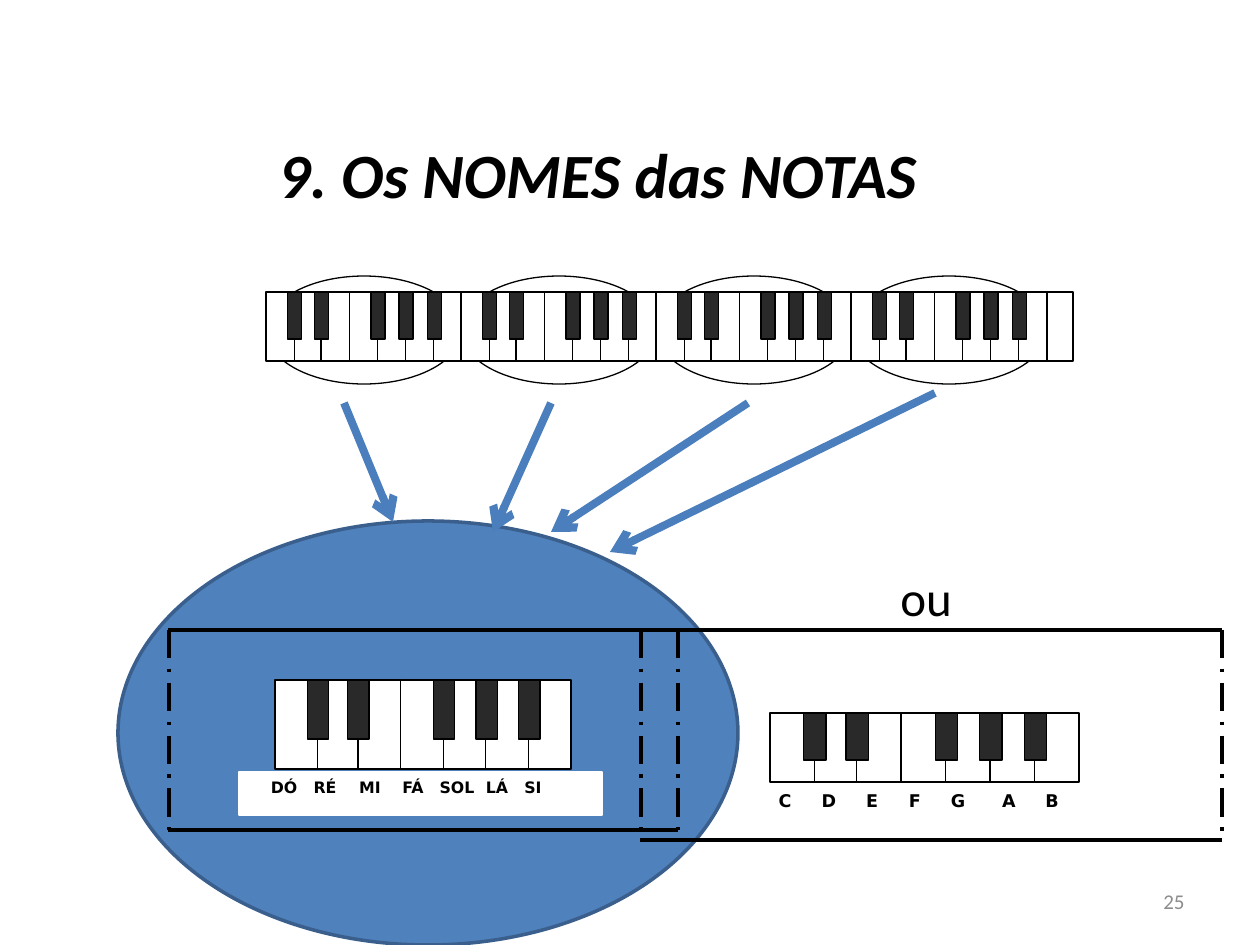
from lxml.etree import SubElement
from pptx import Presentation
from pptx.dml.color import RGBColor
from pptx.enum.dml import MSO_LINE
from pptx.enum.shapes import MSO_CONNECTOR, MSO_SHAPE
from pptx.enum.text import MSO_ANCHOR, MSO_AUTO_SIZE, PP_ALIGN
from pptx.oxml.ns import qn
from pptx.util import Pt

SCALE = 914400 / 126  # EMU per px
hex_color = RGBColor.from_string


def emu(*lengths):
    return [round(length * SCALE) for length in lengths]


def draw(shapes, kind, frame, fill, line, weight=0.75):
    shape = shapes.add_shape(kind, *emu(*frame))
    shape.shadow.inherit = False
    shape.fill.solid()
    shape.fill.fore_color.rgb = hex_color(fill)
    shape.line.color.rgb = hex_color(line)
    shape.line.width = Pt(weight)
    return shape


deck = Presentation()
deck.slide_width, deck.slide_height = emu(1260, 945)
page = deck.slides.add_slide(deck.slide_layouts[6])

# Large ellipse behind the solfège keyboard
draw(page.shapes, MSO_SHAPE.OVAL, (118, 521, 620, 424), "4F81BD", "3A5F8C", 2)

# Long keyboard: one ellipse behind each of its four octaves
piano = page.shapes.add_group_shape().shapes
starts = [266 + 195 * number for number in range(4)]
for left in starts:
    draw(piano, MSO_SHAPE.OVAL, (left, 276, 196, 108), "FFFFFF", "000000")
octaves = [(piano, left, 292, 196, 69, 47) for left in starts]

# Note names, centred on tab stops under the two small keyboards
solfege = page.shapes.add_group_shape().shapes
letters = page.shapes.add_group_shape().shapes
labels = [
    (solfege, (239, 772, 363, 43), 9, ["DÓ", "RÉ", "MI", "FÁ", "SOL", "LÁ", "SI"],
     [284, 325, 370, 413, 457, 497, 533]),
    (letters, (742, 784, 354, 30), 10, list("CDEFGAB"),
     [785, 829, 872, 915, 958, 1009, 1052]),
]
for group, frame, size, names, centres in labels:
    label = draw(group, MSO_SHAPE.RECTANGLE, frame, "FFFFFF", "FFFFFF")
    text = label.text_frame
    text.word_wrap = True
    text.vertical_anchor = MSO_ANCHOR.TOP
    text.margin_left = text.margin_right = 0
    para = text.paragraphs[0]
    para.text = "".join("\t" + name for name in names)
    para.alignment = PP_ALIGN.LEFT
    stops = SubElement(para._p.get_or_add_pPr(), qn("a:tabLst"))
    for centre in centres:
        SubElement(stops, qn("a:tab"), pos=str(emu(centre - frame[0])[0]), algn="ctr")
    para.font.size = Pt(size)
    para.font.name = "DejaVu Sans"
    para.font.bold = True
    para.font.color.rgb = hex_color("000000")
octaves += [(solfege, 275, 680, 296, 89, 59), (letters, 770, 713, 309, 69, 47)]

# Keys of every octave, placed in units of one white key
for group, left, top, width, height, black_height in octaves:
    key = width / 6.95
    for number in reversed(range(7)):
        offset = max(0, number - 0.05) * key
        draw(group, MSO_SHAPE.RECTANGLE, (left + offset, top, key, height), "FFFFFF", "000000")
    for offset in (0.76, 1.71, 3.72, 4.72, 5.72):
        draw(group, MSO_SHAPE.RECTANGLE,
             (left + offset * key, top, key / 2, black_height), "292929", "000000")
draw(piano, MSO_SHAPE.RECTANGLE, (1047, 292, 26, 69), "FFFFFF", "000000")

# Frames around the small keyboards, dashed at the sides, and arrows to the ellipse
lines = []
for group, left, right, top, bottom in ((solfege, 168, 678, 630, 830),
                                        (letters, 640, 1222, 630, 840)):
    lines += [(group, (left, y, right, y), "solid") for y in (top, bottom)]
    lines += [(group, (x, top, x, bottom), "dashed") for x in (right, left + 1)]
for ends in ((344, 403, 393, 522), (551, 403, 493, 532),
             (748, 403, 551, 532), (935, 393, 610, 552)):
    lines.append((page.shapes, ends, "arrow"))
for shapes, ends, style in lines:
    line = shapes.add_connector(MSO_CONNECTOR.STRAIGHT, *emu(*ends))
    SubElement(line._element.spPr, qn("a:effectLst"))
    line.line.color.rgb = hex_color("4B7EBC" if style == "arrow" else "000000")
    line.line.width = Pt(4.5 if style == "arrow" else 2)
    if style == "dashed":
        line.line.dash_style = MSO_LINE.LONG_DASH_DOT
    if style == "arrow":
        SubElement(line.line._get_or_add_ln(), qn("a:tailEnd"), type="arrow")

# Title, "ou" and page number
for words, frame, size, color, align, anchor in (
    ("9. Os NOMES das NOTAS", (266, 129, 672, 89), 36, "000000", PP_ALIGN.LEFT, MSO_ANCHOR.TOP),
    ("ou", (867, 561, 118, 72), 28, "000000", PP_ALIGN.CENTER, MSO_ANCHOR.TOP),
    ("25", (903, 876, 294, 50), 12, "8C8C8C", PP_ALIGN.RIGHT, MSO_ANCHOR.MIDDLE),
):
    is_title = size == 36
    box = page.shapes.add_textbox(*emu(*frame))
    text = box.text_frame
    text.word_wrap = not is_title
    text.vertical_anchor = anchor
    if anchor == MSO_ANCHOR.TOP:
        text.auto_size = MSO_AUTO_SIZE.SHAPE_TO_FIT_TEXT
    para = text.paragraphs[0]
    para.text = words
    para.alignment = align
    para.font.size = Pt(size)
    para.font.name = "Calibri"
    para.font.bold = para.font.italic = is_title
    para.font.color.rgb = hex_color(color)

deck.save("out.pptx")
